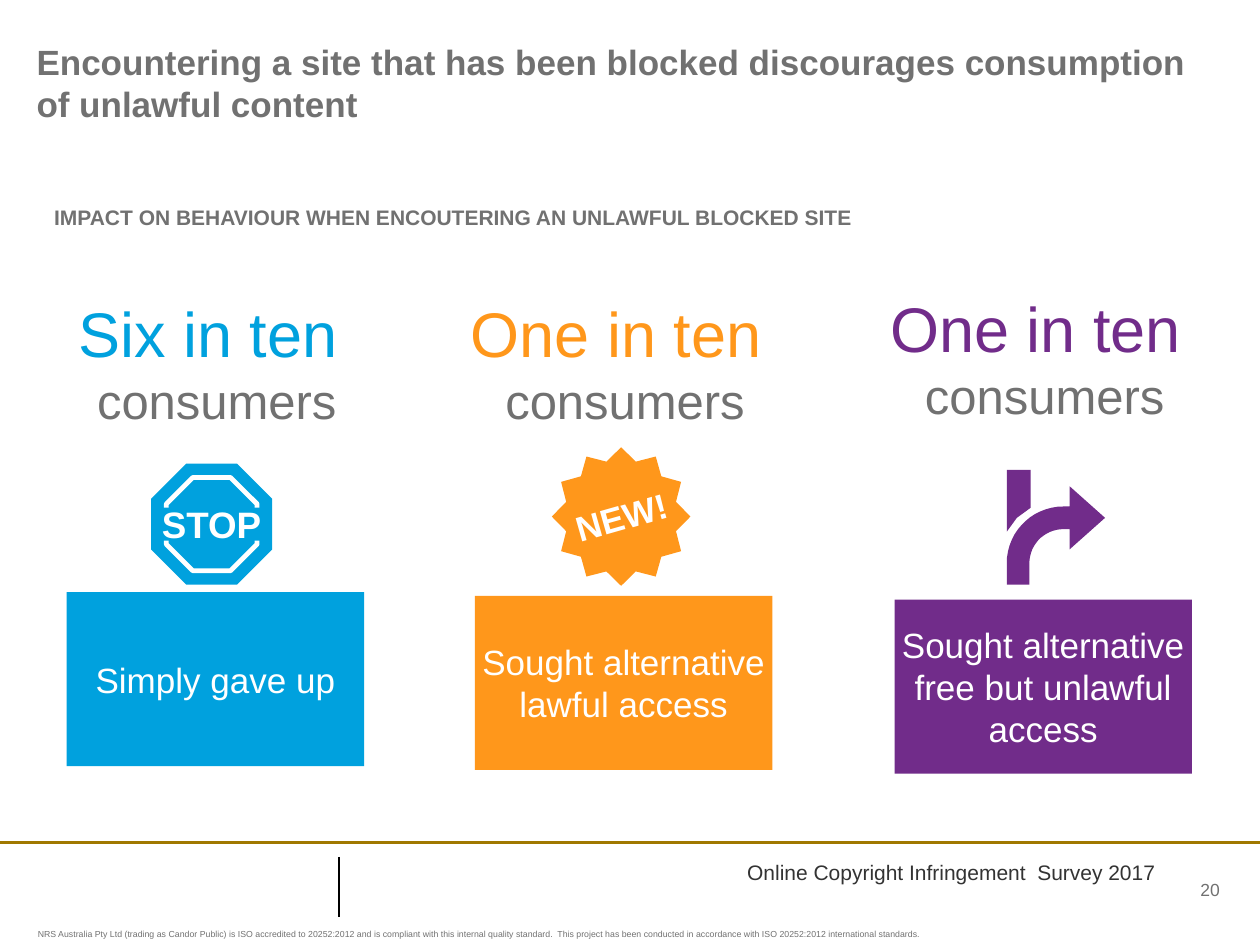
import math

from lxml import etree
from pptx import Presentation
from pptx.dml.color import RGBColor
from pptx.enum import shapes, text
from pptx.oxml.ns import qn
from pptx.util import Inches, Pt

GREY = RGBColor(0x71, 0x71, 0x71)
DARK = RGBColor(0x33, 0x33, 0x33)
BLACK = RGBColor(0x00, 0x00, 0x00)
WHITE = RGBColor(0xFF, 0xFF, 0xFF)
GOLD = RGBColor(0xA0, 0x78, 0x00)
BLUE = RGBColor(0x00, 0xA1, 0xDE)
ORANGE = RGBColor(0xFF, 0x97, 0x1B)
PURPLE = RGBColor(0x71, 0x2C, 0x8A)
FONT = "Arial"
UNITS = 1000


def style(font, size, color, bold=False):
    """Set the typeface, size, colour and weight of a font."""
    font.name, font.size, font.bold = FONT, Pt(size), bold
    font.color.rgb = color


def write(sp, words, size, color, bold=False, align=text.PP_ALIGN.LEFT,
          anchor=text.MSO_ANCHOR.TOP, inset=0, wrap=True):
    """Write one paragraph into a shape."""
    tf = sp.text_frame
    tf.word_wrap, tf.vertical_anchor = wrap, anchor
    tf.margin_left = tf.margin_right = Inches(inset)
    tf.margin_top = tf.margin_bottom = Inches(inset)
    p = tf.paragraphs[0]
    p.text, p.alignment = words, align
    style(p.font, size, color, bold)


def add_label(s, box, words, size, color, **options):
    """Add a text box at the given left, top, width and height."""
    sp = s.shapes.add_textbox(*map(Inches, box))
    write(sp, words, size, color, **options)
    return sp


def add_block(s, kind, box, color):
    """Add a flat preset shape filled with one colour."""
    sp = s.shapes.add_shape(kind, *map(Inches, box))
    sp.shadow.inherit = False
    sp.fill.solid()
    sp.fill.fore_color.rgb = color
    sp.line.fill.background()
    return sp


def add_rule(s, x1, y1, x2, y2, color, width):
    """Add a straight line without a shadow."""
    line = s.shapes.add_connector(shapes.MSO_CONNECTOR.STRAIGHT,
                                  *map(Inches, (x1, y1, x2, y2)))
    line.line.color.rgb, line.line.width = color, Pt(width)
    etree.SubElement(line._element.spPr, qn("a:effectLst"))


def add_outline(s, left, top, contours, closed=True):
    """Add a freeform of contours in inches, measured from left and top."""
    first, *others = [[((left + x) * UNITS, (top + y) * UNITS)
                       for x, y in contour] for contour in contours]
    fb = s.shapes.build_freeform(*first[0], scale=Inches(1) / UNITS)
    fb.add_line_segments(first[1:], close=closed)
    for points in others:
        fb.move_to(*points[0])
        fb.add_line_segments(points[1:], close=closed)
    sp = fb.convert_to_shape()
    sp.shadow.inherit = False
    return sp


def stop_icon(s, left, top, color):
    """Draw an octagonal stop sign with a broken white border."""
    size = 0.96
    sign = add_block(s, shapes.MSO_SHAPE.OCTAGON, (left, top, size, size), color)
    sign.adjustments[0] = 0.29
    write(sign, "STOP", 21, WHITE, bold=True, align=text.PP_ALIGN.CENTER,
          anchor=text.MSO_ANCHOR.MIDDLE, wrap=False)
    upper = [(0.12, 0.35), (0.12, 0.32), (0.33, 0.11),
             (0.63, 0.11), (0.84, 0.32), (0.84, 0.35)]
    lower = [(x, size - y) for x, y in upper]
    border = add_outline(s, left, top, [upper, lower], closed=False)
    border.fill.background()
    border.line.color.rgb, border.line.width = WHITE, Pt(2.75)


def new_icon(s, left, top, color):
    """Draw a twelve-pointed badge with a tilted word."""
    size = 1.1
    badge = add_block(s, shapes.MSO_SHAPE.STAR_12_POINT,
                      (left, top, size, size), color)
    badge.adjustments[0] = 0.41
    word = add_label(s, (left + 0.1, top + 0.36, 0.9, 0.38), "NEW!", 20, WHITE,
                     bold=True, align=text.PP_ALIGN.CENTER,
                     anchor=text.MSO_ANCHOR.MIDDLE, wrap=False)
    word.rotation = -16


def turn_icon(s, left, top, color):
    """Draw a road stem with an arrow turning off to the right."""
    def arc(radius):
        """Return a quarter turn from the left to the top."""
        angles = [math.radians(a) for a in range(0, 91, 6)]
        return [(0.45 - radius * math.cos(a), 0.74 - radius * math.sin(a))
                for a in angles]

    stem = [(0, 0.49), (0, 0), (0.19, 0), (0.19, 0.3), (0.08, 0.38)]
    head = [(0.5, 0.29), (0.5, 0.13), (0.78, 0.38), (0.5, 0.63), (0.5, 0.47)]
    arrow = [(0, 0.91), *arc(0.45), *head, *reversed(arc(0.27)), (0.18, 0.91)]
    sp = add_outline(s, left, top, [stem, arrow])
    sp.fill.solid()
    sp.fill.fore_color.rgb = color
    sp.line.fill.background()


def add_finding(s, left, head_top, box_top, share, action, color):
    """Place a headline share above a coloured box naming the action."""
    center = text.PP_ALIGN.CENTER
    sp = add_label(s, (left - 0.05, head_top, 2.48, 1.08), "", 36, color,
                   align=center, wrap=False)
    p = sp.text_frame.paragraphs[0]
    r = p.add_run()
    r.text = share + " "
    style(r.font, 36, color)
    p.add_line_break()
    r = p.add_run()
    r.text = "consumers"
    style(r.font, 28, GREY)
    box = add_block(s, shapes.MSO_SHAPE.RECTANGLE,
                    (left, box_top, 2.36, 1.38), color)
    write(box, action, 20, WHITE, align=center,
          anchor=text.MSO_ANCHOR.MIDDLE, inset=0.04)


def add_heading(s, left, top, width):
    """Place the title and the subheading."""
    add_label(s, (left, top, width, 0.93),
              "Encountering a site that has been blocked discourages "
              "consumption of unlawful content", 20, GREY, bold=True)
    add_label(s, (left + 0.14, top + 1.3, width - 0.28, 0.2),
              "IMPACT ON BEHAVIOUR WHEN ENCOUTERING AN UNLAWFUL BLOCKED SITE",
              12, GREY, bold=True)


def add_footer(s, top, width):
    """Place the rules, survey name, page number and accreditation note."""
    add_rule(s, 0, top, width, top, GOLD, 1.75)
    add_rule(s, 2.69, top + 0.11, 2.69, top + 0.59, BLACK, 0.75)
    add_label(s, (0.3, top + 0.68, 9.4, 0.08),
              "NRS Australia Pty Ltd (trading as Candor Public) is ISO accredited "
              "to 20252:2012 and is compliant with this internal quality standard.  "
              "This project has been conducted in accordance with ISO 20252:2012 "
              "international standards.", 5, GREY)
    add_label(s, (5.93, top + 0.13, 3.59, 0.42),
              "Online Copyright Infringement  Survey 2017", 12, DARK)
    add_label(s, (9.13, top + 0.23, 0.55, 0.28), "20", 10, GREY,
              align=text.PP_ALIGN.RIGHT, anchor=text.MSO_ANCHOR.MIDDLE)


def main():
    """Build the slide and save it."""
    prs = Presentation()
    prs.slide_width, prs.slide_height = Inches(10), Inches(7.5)
    s = prs.slides.add_slide(prs.slide_layouts[6])
    add_footer(s, 6.69, 10)
    add_heading(s, 0.29, 0.32, 9.4)
    add_finding(s, 0.53, 2.34, 4.7, "Six in ten", "Simply gave up", BLUE)
    stop_icon(s, 1.2, 3.68, BLUE)
    add_finding(s, 3.77, 2.34, 4.73, "One in ten",
                "Sought alternative lawful access", ORANGE)
    new_icon(s, 4.38, 3.55, ORANGE)
    add_finding(s, 7.1, 2.3, 4.76, "One in ten",
                "Sought alternative free but unlawful access", PURPLE)
    turn_icon(s, 7.99, 3.73, PURPLE)
    prs.save("out.pptx")


if __name__ == "__main__":
    main()
